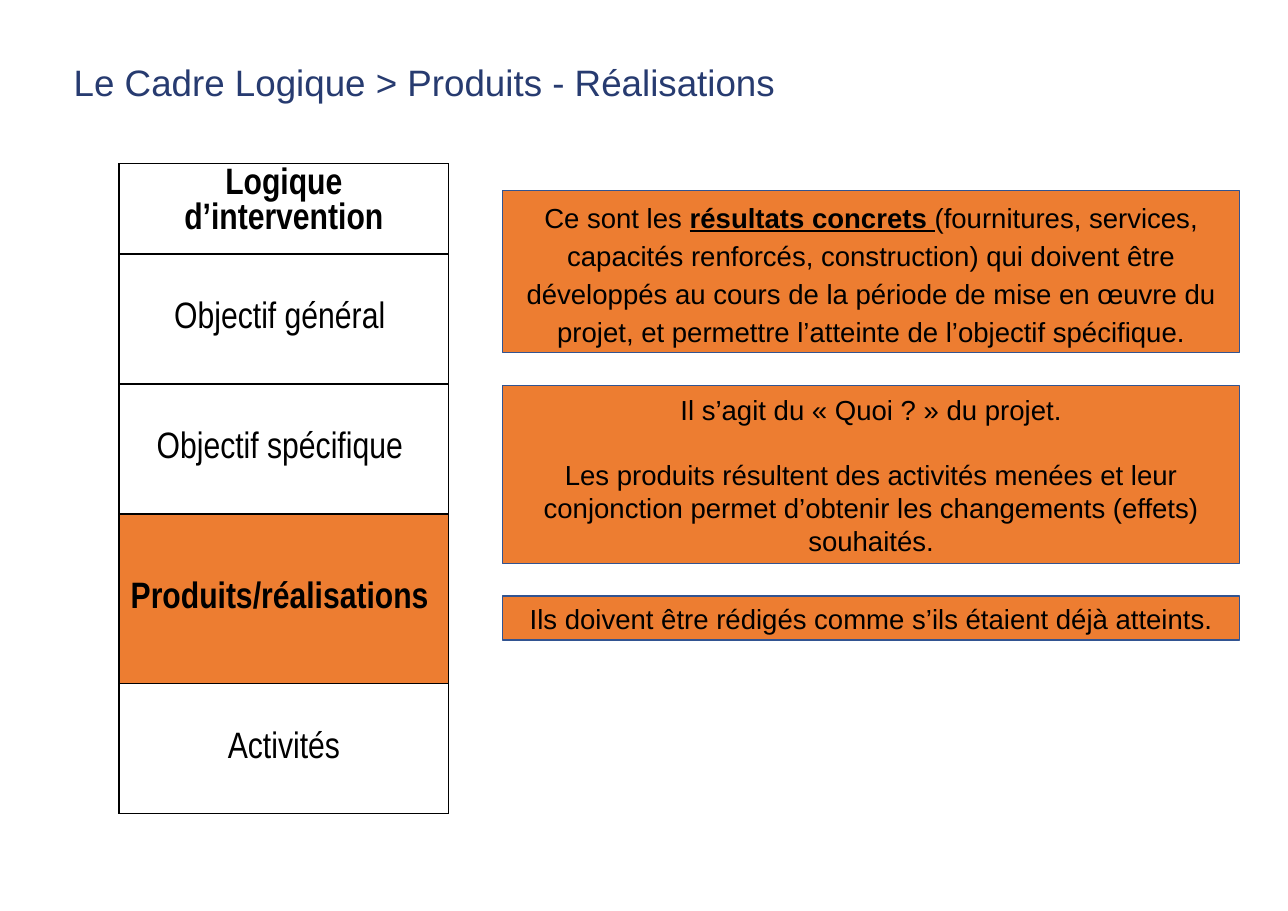
from dataclasses import dataclass

from lxml import etree
from pptx import Presentation
from pptx import util as u
from pptx.dml.color import RGBColor
from pptx.enum import shapes, text
from pptx.oxml import ns

Pt = u.Pt


@dataclass(frozen=True)
class Theme:
    """Hold the colours, fonts and type sizes of the slide."""
    navy: str = "273B70"
    ink: str = "000000"
    accent: str = "ED7D31"
    edge: str = "325491"
    sans: str = "Arial"
    slim: str = "Arial Narrow"
    large: int = 24
    body: int = 18


THEME = Theme()
LEVELS = [
    ("Logique d’intervention", 59, True),
    ("Objectif général ", 85, False),
    ("Objectif spécifique ", 85, False),
    ("Produits/réalisations ", 111, True),
    ("Activités", 85, False),
]
ACTIVE = 3
NOTES = [
    (124.5, 106, 1.15, [[
        ("Ce sont les ", False),
        ("résultats concrets ", True),
        ("(fournitures, services, capacités renforcés, construction) qui doivent "
         "être développés au cours de la période de mise en œuvre du projet, et "
         "permettre l’atteinte de l’objectif spécifique.", False),
    ]]),
    (252, 116.5, 1.0, [
        [("Il s’agit du « Quoi ? » du projet.", False)],
        [("Les produits résultent des activités menées et leur conjonction permet "
          "d’obtenir les changements (effets) souhaités.", False)],
    ]),
    (389.5, 29, 1.0, [
        [("Ils doivent être rédigés comme s’ils étaient déjà atteints.", False)],
    ]),
]


def add_run(para, words, face, size, hue, bold=False, under=False):
    """Add one formatted run to a paragraph."""
    run = para.add_run()
    run.text = words
    font = run.font
    font.name, font.size, font.bold, font.underline = face, Pt(size), bold, under
    font.color.rgb = RGBColor.from_string(hue)


def add_title(slide, left, top, width, height):
    """Place the slide title in its box."""
    title = slide.shapes.title
    title.left, title.top = Pt(left), Pt(top)
    title.width, title.height = Pt(width), Pt(height)
    frame = title.text_frame
    frame.word_wrap = True
    frame.vertical_anchor = text.MSO_ANCHOR.MIDDLE
    para = frame.paragraphs[0]
    para.alignment = text.PP_ALIGN.LEFT
    para.line_spacing = 0.9
    add_run(para, "Le Cadre Logique > Produits - Réalisations",
            THEME.sans, THEME.large, THEME.navy)


def add_edges(cell):
    """Draw a thin dark border on all four sides of a cell."""
    props = cell._tc.get_or_add_tcPr()
    for side in ("a:lnL", "a:lnR", "a:lnT", "a:lnB"):
        line = etree.SubElement(props, ns.qn(side), w=str(Pt(1)))
        fill = etree.SubElement(line, ns.qn("a:solidFill"))
        etree.SubElement(fill, ns.qn("a:srgbClr"), val=THEME.ink)


def add_levels(slide, left, top, width):
    """Build the one-column table of intervention levels."""
    total = sum(height for _, height, _ in LEVELS)
    table = slide.shapes.add_table(
        len(LEVELS), 1, Pt(left), Pt(top), Pt(width), Pt(total)).table
    table.first_row = table.horz_banding = False
    for index, (label, height, bold) in enumerate(LEVELS):
        table.rows[index].height = Pt(height)
        cell = table.cell(index, 0)
        add_edges(cell)
        if index == ACTIVE:
            cell.fill.solid()
            cell.fill.fore_color.rgb = RGBColor.from_string(THEME.accent)
        else:
            cell.fill.background()
        cell.margin_left = cell.margin_right = Pt(5.4)
        cell.margin_top = cell.margin_bottom = Pt(2.7)
        cell.vertical_anchor = (
            text.MSO_ANCHOR.MIDDLE if index else text.MSO_ANCHOR.TOP)
        para = cell.text_frame.paragraphs[0]
        para.alignment = text.PP_ALIGN.CENTER
        add_run(para, label, THEME.slim, THEME.large, THEME.ink, bold)


def add_note(slide, left, top, width, height, pitch, paras):
    """Place one filled note with its centred paragraphs."""
    box = slide.shapes.add_shape(
        shapes.MSO_SHAPE.RECTANGLE, Pt(left), Pt(top), Pt(width), Pt(height))
    box.shadow.inherit = False
    box.fill.solid()
    box.fill.fore_color.rgb = RGBColor.from_string(THEME.accent)
    box.line.color.rgb = RGBColor.from_string(THEME.edge)
    box.line.width = Pt(1)
    frame = box.text_frame
    frame.word_wrap = True
    frame.vertical_anchor = text.MSO_ANCHOR.MIDDLE
    for index, runs in enumerate(paras):
        para = frame.add_paragraph() if index else frame.paragraphs[0]
        para.alignment = text.PP_ALIGN.CENTER
        para.line_spacing = pitch
        if index:
            para.space_before = Pt(21)
        for words, strong in runs:
            add_run(para, words, THEME.sans, THEME.body, THEME.ink, strong, strong)


def main():
    """Build the slide and save it."""
    deck = Presentation()
    deck.slide_width, deck.slide_height = Pt(841.68), Pt(595.44)
    slide = deck.slides.add_slide(deck.slide_layouts[5])
    add_title(slide, 41, 24.5, 776, 62)
    add_levels(slide, 77.75, 107, 215.5)
    for top, height, pitch, paras in NOTES:
        add_note(slide, 328.5, top, 481.5, height, pitch, paras)
    deck.save("out.pptx")


if __name__ == "__main__":
    main()
